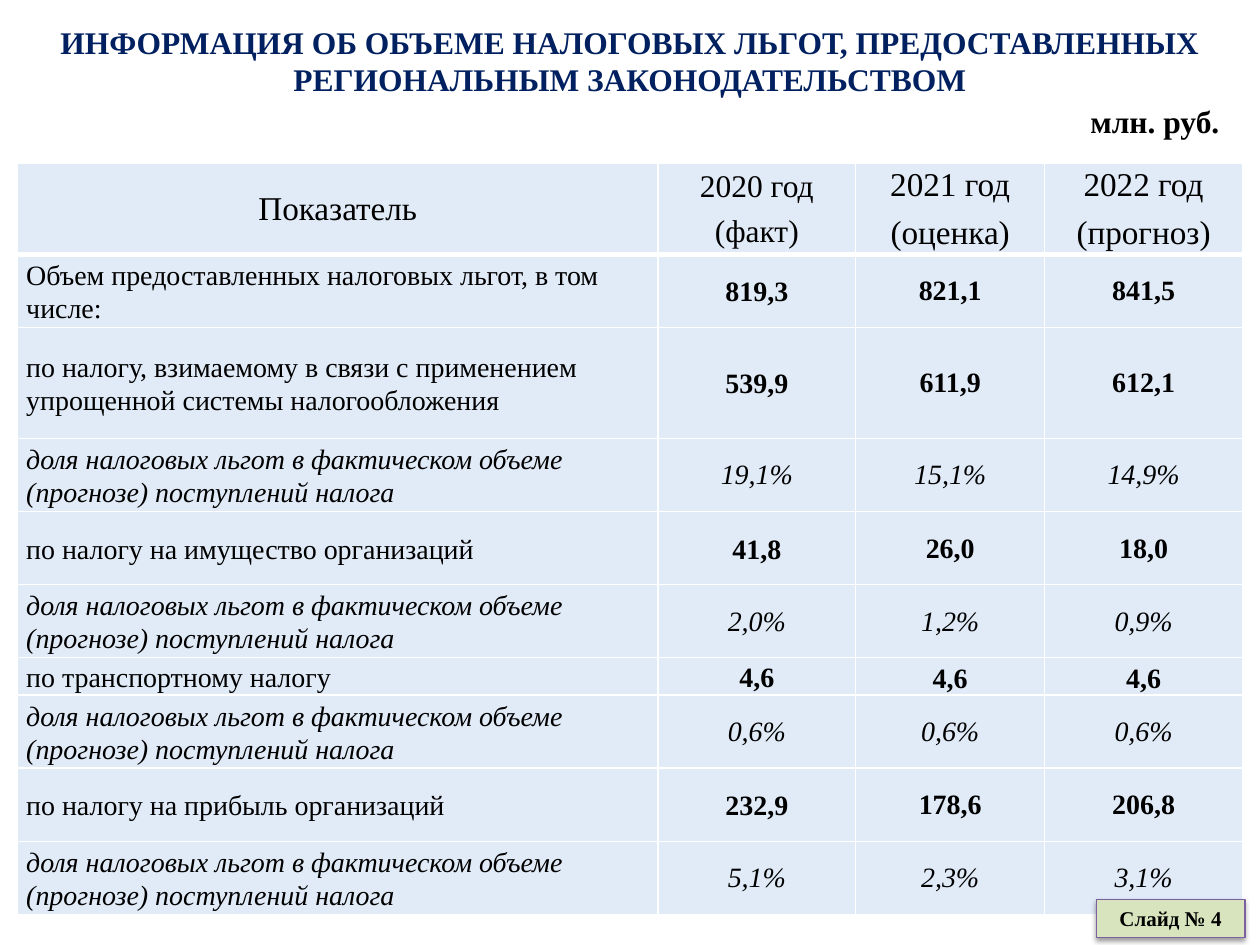
from lxml import etree
from pptx import Presentation
from pptx.dml.color import RGBColor
from pptx.enum.shapes import MSO_SHAPE
from pptx.enum.text import MSO_ANCHOR as ANCHOR, PP_ALIGN as ALIGN
from pptx.oxml import parse_xml
from pptx.oxml.ns import nsdecls, qn
from pptx.util import Pt

FONT = "Times New Roman"
COLUMN_WIDTHS = [366, 113, 108, 113]
ROW_HEIGHTS = [52.3, 41.8, 63.4, 41.8, 41.8, 41.8, 21.4, 41.8, 41.8, 41.8]
SHARE = "доля налоговых льгот в фактическом объеме (прогнозе) поступлений налога"
HEADERS = [
    (["Показатель"], 19, 8),
    (["2020 год", "(факт)"], 18, 6),
    (["2021 год", "(оценка)"], 19, 6),
    (["2022 год", "(прогноз)"], 19, 6),
]
BENEFITS = [
    ("Объем предоставленных налоговых льгот, в том числе:", "819,3", "821,1", "841,5"),
    ("по налогу, взимаемому в связи с применением упрощенной системы налогообложения",
     "539,9", "611,9", "612,1"),
    (SHARE, "19,1%", "15,1%", "14,9%"),
    ("по налогу на имущество организаций", "41,8", "26,0", "18,0"),
    (SHARE, "2,0%", "1,2%", "0,9%"),
    ("по транспортному налогу", "4,6", "4,6", "4,6"),
    (SHARE, "0,6%", "0,6%", "0,6%"),
    ("по налогу на прибыль организаций", "232,9", "178,6", "206,8"),
    (SHARE, "5,1%", "2,3%", "3,1%"),
]


def rgb(color):
    return RGBColor.from_string(color)


def write(frame, lines, size, color="000000", bold=False, italic=False,
          align=ALIGN.CENTER, after=0, spacing=None):
    frame.text = "\n".join(lines)
    for paragraph in frame.paragraphs:
        paragraph.alignment = align
        paragraph.space_after = Pt(after)
        if spacing:
            paragraph.line_spacing = spacing
        font = paragraph.font
        font.name, font.size, font.bold, font.italic = FONT, Pt(size), bold, italic
        font.color.rgb = rgb(color)


def add_label(slide, text, left, top, width, height, wrap=True, **style):
    frame = slide.shapes.add_textbox(Pt(left), Pt(top), Pt(width), Pt(height)).text_frame
    frame.word_wrap = wrap
    write(frame, [text], 18, bold=True, **style)


def style_cell(cell, bottom_width=1, inset=5):
    """Give the cell white borders, a half-transparent fill and its margins."""
    cell.margin_left = cell.margin_right = Pt(inset)
    cell.margin_top, cell.margin_bottom = Pt(0.7), Pt(0)
    cell.vertical_anchor = ANCHOR.MIDDLE
    properties = cell._tc.get_or_add_tcPr()
    for side in ("lnL", "lnR", "lnT", "lnB"):
        width = Pt(bottom_width if side == "lnB" else 1)
        properties.append(parse_xml(
            f'<a:{side} {nsdecls("a")} w="{width}"><a:solidFill>'
            f'<a:srgbClr val="FFFFFF"/></a:solidFill></a:{side}>'))
    cell.fill.solid()
    cell.fill.fore_color.rgb = rgb("C6D9F1")
    tint = properties.find(qn("a:solidFill")).find(qn("a:srgbClr"))
    etree.SubElement(tint, qn("a:alpha"), val="51000")


def add_benefits_table(slide):
    table = slide.shapes.add_table(
        len(ROW_HEIGHTS), len(COLUMN_WIDTHS), Pt(10), Pt(93),
        Pt(sum(COLUMN_WIDTHS)), Pt(sum(ROW_HEIGHTS))).table
    for column, width in zip(table.columns, COLUMN_WIDTHS):
        column.width = Pt(width)
    for row, height in zip(table.rows, ROW_HEIGHTS):
        row.height = Pt(height)

    for column, (lines, size, after) in enumerate(HEADERS):
        cell = table.cell(0, column)
        style_cell(cell, bottom_width=3)
        write(cell.text_frame, lines, size, after=after)

    for row, (name, *values) in enumerate(BENEFITS, 1):
        share = name == SHARE
        name_cell = table.cell(row, 0)
        style_cell(name_cell)
        write(name_cell.text_frame, [name], 16, italic=share,
              align=ALIGN.LEFT, after=8, spacing=1.07)
        for column, value in enumerate(values, 1):
            cell = table.cell(row, column)
            spaced = column == 1 and not share
            style_cell(cell, inset=5 if spaced else 0.7)
            write(cell.text_frame, [value], 16, bold=not share, italic=share,
                  after=8 if spaced else 0, spacing=1.07 if spaced else None)
            if name == "по транспортному налогу" and column > 1:
                cell.vertical_anchor = ANCHOR.BOTTOM


def add_slide_number(slide):
    badge = slide.shapes.add_shape(
        MSO_SHAPE.RECTANGLE, Pt(626.4), Pt(514), Pt(85), Pt(21.8))
    badge.fill.solid()
    badge.fill.fore_color.rgb = rgb("D7E4BD")
    badge.line.color.rgb = rgb("7D60A0")
    badge.line.width = Pt(0.75)
    badge.shadow.inherit = False
    badge._element.spPr.find(qn("a:effectLst")).append(parse_xml(
        f'<a:outerShdw {nsdecls("a")} blurRad="{Pt(3.1)}" dist="{Pt(1.6)}" dir="5400000" '
        'rotWithShape="0"><a:srgbClr val="000000"><a:alpha val="38000"/></a:srgbClr>'
        '</a:outerShdw>'))
    badge.text_frame.vertical_anchor = ANCHOR.TOP
    write(badge.text_frame, ["Слайд № 4"], 12, bold=True)


def main():
    presentation = Presentation()
    presentation.slide_width, presentation.slide_height = Pt(720), Pt(540)
    slide = presentation.slides.add_slide(presentation.slide_layouts[6])
    add_label(slide, "ИНФОРМАЦИЯ ОБ ОБЪЕМЕ НАЛОГОВЫХ ЛЬГОТ, ПРЕДОСТАВЛЕННЫХ "
              "РЕГИОНАЛЬНЫМ ЗАКОНОДАТЕЛЬСТВОМ", 0, 9.4, 720, 51, color="002060")
    add_label(slide, "млн. руб.", 616, 55, 89, 29, wrap=False, align=ALIGN.LEFT)
    add_benefits_table(slide)
    add_slide_number(slide)
    presentation.save("out.pptx")


if __name__ == "__main__":
    main()
